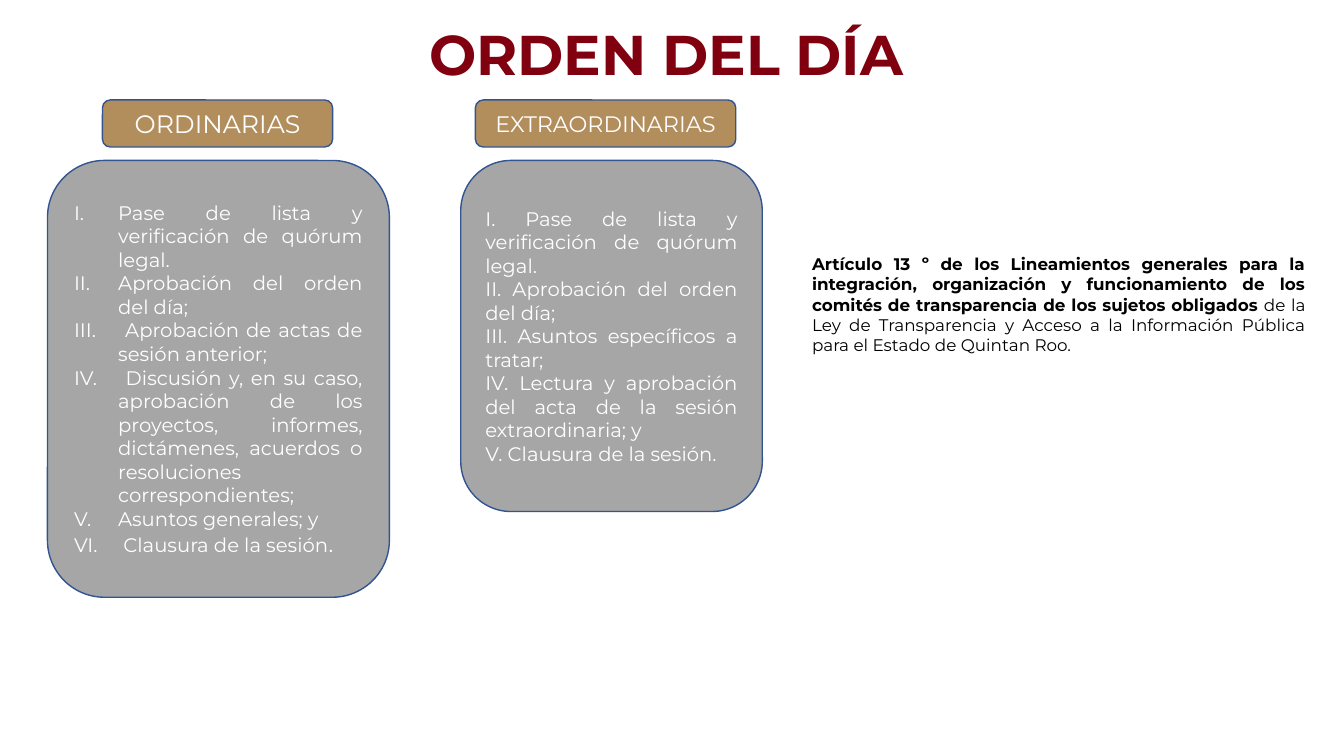
import pptx
import pptx.util
import pptx.dml.color
import pptx.enum.shapes
import pptx.enum.text
import pptx.oxml.ns
import lxml.etree

THEME = {
    "font": "Montserrat",
    "wine": "800010",
    "gold": "B38E5D",
    "gray": "A6A6A6",
    "edge": "325491",
    "white": "FFFFFF",
    "black": "000000",
    "title": 40,
    "heading": 18,
    "long_heading": 16,
    "item": 14,
    "closing": 16,
    "note": 12,
}
COLUMNS, ROWS = 160, 90
HEADING_TOP, HEADING_ROWS = 11.9, 5.6
AGENDA_TOP = 19.1
NUMBER_INDENT = 5.25
CENTER = pptx.enum.text.PP_ALIGN.CENTER
JUSTIFY = pptx.enum.text.PP_ALIGN.JUSTIFY

deck = pptx.Presentation()
deck.slide_width = pptx.util.Inches(13.33)
deck.slide_height = pptx.util.Inches(7.5)
column = deck.slide_width / COLUMNS
row = deck.slide_height / ROWS
slide = deck.slides.add_slide(deck.slide_layouts[6])


def write(paragraphs, left, top, width, height, size, color, align=JUSTIFY,
          bold=False, fill=None, numbered=False, spacing=None, grow=False):
    place = [int(left * column), int(top * row), int(width * column), int(height * row)]
    if fill:
        box = slide.shapes.add_shape(
            pptx.enum.shapes.MSO_SHAPE.ROUNDED_RECTANGLE, *place)
        box.shadow.inherit = False
        box.fill.solid()
        box.fill.fore_color.rgb = pptx.dml.color.RGBColor.from_string(fill)
        box.line.color.rgb = pptx.dml.color.RGBColor.from_string(THEME["edge"])
        box.line.width = pptx.util.Pt(1)
    else:
        box = slide.shapes.add_textbox(*place)
    frame = box.text_frame
    frame.word_wrap = True
    if grow:
        frame.auto_size = pptx.enum.text.MSO_AUTO_SIZE.SHAPE_TO_FIT_TEXT
    else:
        frame.vertical_anchor = pptx.enum.text.MSO_ANCHOR.MIDDLE
    for index, runs in enumerate(paragraphs):
        paragraph = frame.add_paragraph() if index else frame.paragraphs[0]
        paragraph.alignment = align
        if spacing:
            paragraph.line_spacing = spacing
        if numbered:
            properties = paragraph._p.get_or_add_pPr()
            indent = int(NUMBER_INDENT * column)
            properties.set("marL", str(indent))
            properties.set("indent", str(-indent))
            numbering = lxml.etree.SubElement(
                properties, pptx.oxml.ns.qn("a:buAutoNum"))
            numbering.set("type", "romanUcPeriod")
        for words, changes in runs:
            run = paragraph.add_run()
            run.text = words
            run.font.name = THEME["font"]
            run.font.size = pptx.util.Pt(changes.get("size", size))
            run.font.bold = changes.get("bold", bold)
            run.font.color.rgb = pptx.dml.color.RGBColor.from_string(color)


write([[("ORDEN DEL DÍA", {})]], 10.3, 1.7, 138, 10.2, THEME["title"],
      THEME["wine"], align=CENTER, bold=True, spacing=0.9)

headings = [
    ("ORDINARIAS", 12.2, 27.4, THEME["heading"]),
    ("EXTRAORDINARIAS", 56.6, 31, THEME["long_heading"]),
]
for session, left, width, size in headings:
    write([[(session, {})]], left, HEADING_TOP, width, HEADING_ROWS, size,
          THEME["white"], align=CENTER, fill=THEME["gold"])

ordinary_agenda = [
    [("Pase de lista y verificación de quórum legal.", {})],
    [("Aprobación del orden del día;", {})],
    [(" Aprobación de actas de sesión anterior; ", {})],
    [(" Discusión y, en su caso, aprobación de los proyectos, informes, "
      "dictámenes, acuerdos o resoluciones correspondientes; ", {})],
    [("Asuntos generales; y", {})],
    [(" Clausura de la sesión", {}), (". ", {"size": THEME["closing"]})],
]
extraordinary_agenda = [
    [("I. Pase de lista y verificación de quórum legal.", {})],
    [("II. Aprobación del orden del día;", {})],
    [("III. Asuntos específicos a tratar;", {})],
    [("IV. Lectura y aprobación del acta de la sesión extraordinaria; y", {})],
    [("V. Clausura de la sesión.", {})],
]
agendas = [
    (ordinary_agenda, 5.65, 40.7, 52, True),
    (extraordinary_agenda, 54.85, 35.9, 41.8, False),
]
for agenda, left, width, height, numbered in agendas:
    write(agenda, left, AGENDA_TOP, width, height, THEME["item"],
          THEME["white"], fill=THEME["gray"], numbered=numbered)

legal_basis = [[
    ("Artículo 13 º de los Lineamientos generales para la integración, "
     "organización y funcionamiento de los comités de transparencia de los "
     "sujetos obligados", {"bold": True}),
    (" de la Ley de Transparencia y Acceso a la Información Pública para el "
     "Estado de Quintan Roo.", {}),
]]
write(legal_basis, 95.5, 29.65, 61.1, 13.3, THEME["note"], THEME["black"], grow=True)

deck.save("out.pptx")
